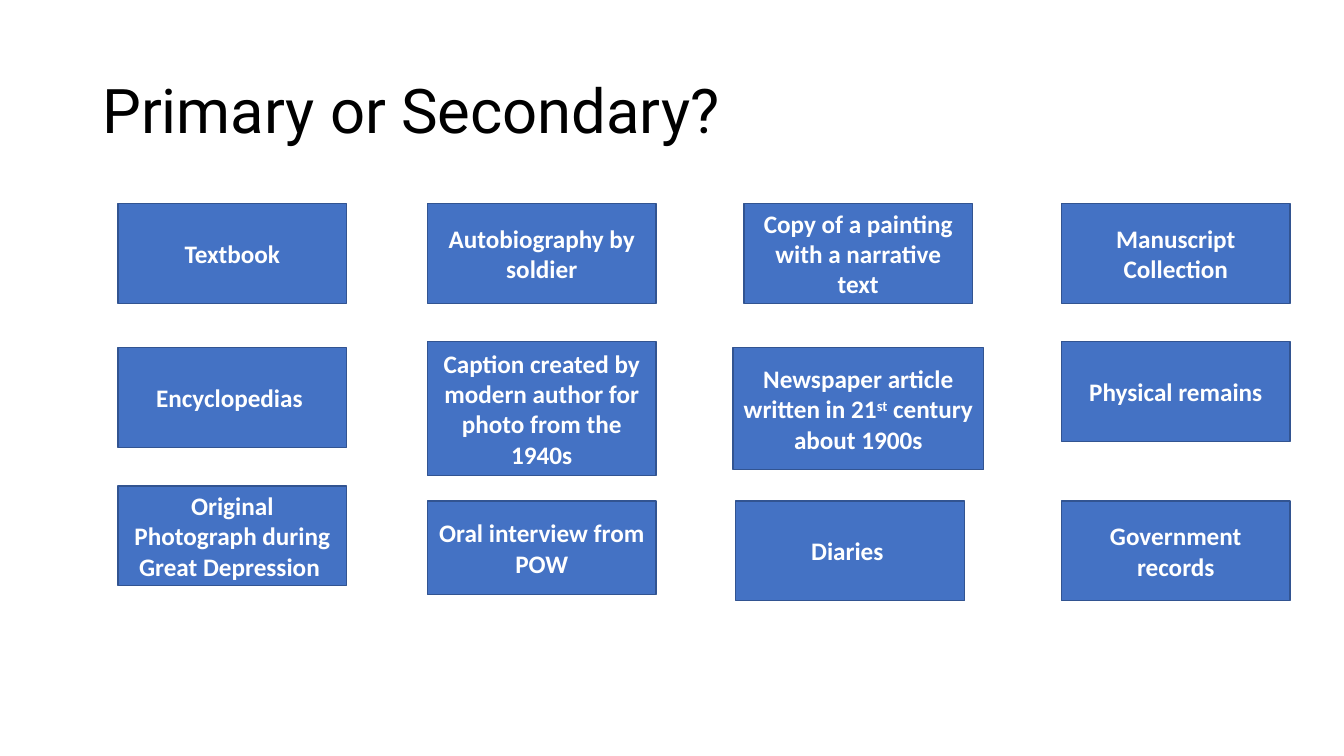
from pptx import Presentation, util as u
from pptx.dml.color import RGBColor
from pptx.enum import shapes, text

Pt = u.Pt

# Content: four columns of cards, each given as (text, top, size overrides);
# "^" encloses superscript text
TITLE = "Primary or Secondary?"
COLUMNS = [
    (165.96, [
        ("Textbook", 145.44, {}),
        ("Encyclopedias ", 248.4, {}),
        ("Original Photograph during Great Depression ", 347.04, {}),
    ]),
    (387, [
        ("Autobiography by soldier", 145.44, {}),
        ("Caption created by modern author for photo from the 1940s", 244.08, {"h": 95.76}),
        ("Oral interview from POW", 357.84, {"h": 66.96}),
    ]),
    (613.08, [
        ("Copy of a painting with a narrative text", 145.44, {}),
        ("Newspaper article written in 21^st^ century about 1900s", 248.4,
         {"w": 179.28, "h": 87.12}),
        ("Diaries ", 357.84, {"dx": -5.76}),
    ]),
    (839.88, [
        ("Manuscript Collection", 145.44, {}),
        ("Physical remains", 244.08, {}),
        ("Government records", 357.84, {}),
    ]),
]
COLORS = {"card": "4472C4", "edge": "325491", "card_text": "FFFFFF", "title": "000000"}
CARD = {"w": 163.44, "h": 71.28, "dx": 0}
TITLE_FONT = {"name": "Roboto", "size": Pt(44)}
CARD_FONT = {"name": "Calibri", "size": Pt(18), "bold": True}
FRAME = {"word_wrap": True, "vertical_anchor": text.MSO_ANCHOR.MIDDLE}


def rgb(key):
    return RGBColor.from_string(COLORS[key])


def apply(obj, values):
    for name, value in values.items():
        setattr(obj, name, value)


def write(sp, content, font, color, **para):
    tf = sp.text_frame
    apply(tf, FRAME)
    p = tf.paragraphs[0]
    apply(p, para)
    for i, part in enumerate(content.split("^")):
        r = p.add_run()
        r.text = part
        apply(r.font, font)
        r.font.color.rgb = rgb(color)
        if i % 2:
            r.font._element.set("baseline", "30000")


prs = Presentation()
prs.slide_width, prs.slide_height = Pt(960), Pt(540)
s = prs.slides.add_slide(prs.slide_layouts[6])

# Title
sp = s.shapes.add_textbox(Pt(66), Pt(28.75), Pt(828), Pt(104.4))
write(sp, TITLE, TITLE_FONT, "title", line_spacing=0.9)

# Cards, centred on their column
for center, cards in COLUMNS:
    for label, top, changes in cards:
        box = {**CARD, **changes}
        left = center + box["dx"] - box["w"] / 2
        sp = s.shapes.add_shape(shapes.MSO_SHAPE.RECTANGLE,
                                Pt(left), Pt(top), Pt(box["w"]), Pt(box["h"]))
        sp.shadow.inherit = False
        sp.fill.solid()
        sp.fill.fore_color.rgb = rgb("card")
        sp.line.color.rgb = rgb("edge")
        sp.line.width = Pt(1)
        write(sp, label, CARD_FONT, "card_text", alignment=text.PP_ALIGN.CENTER)

prs.save("out.pptx")
